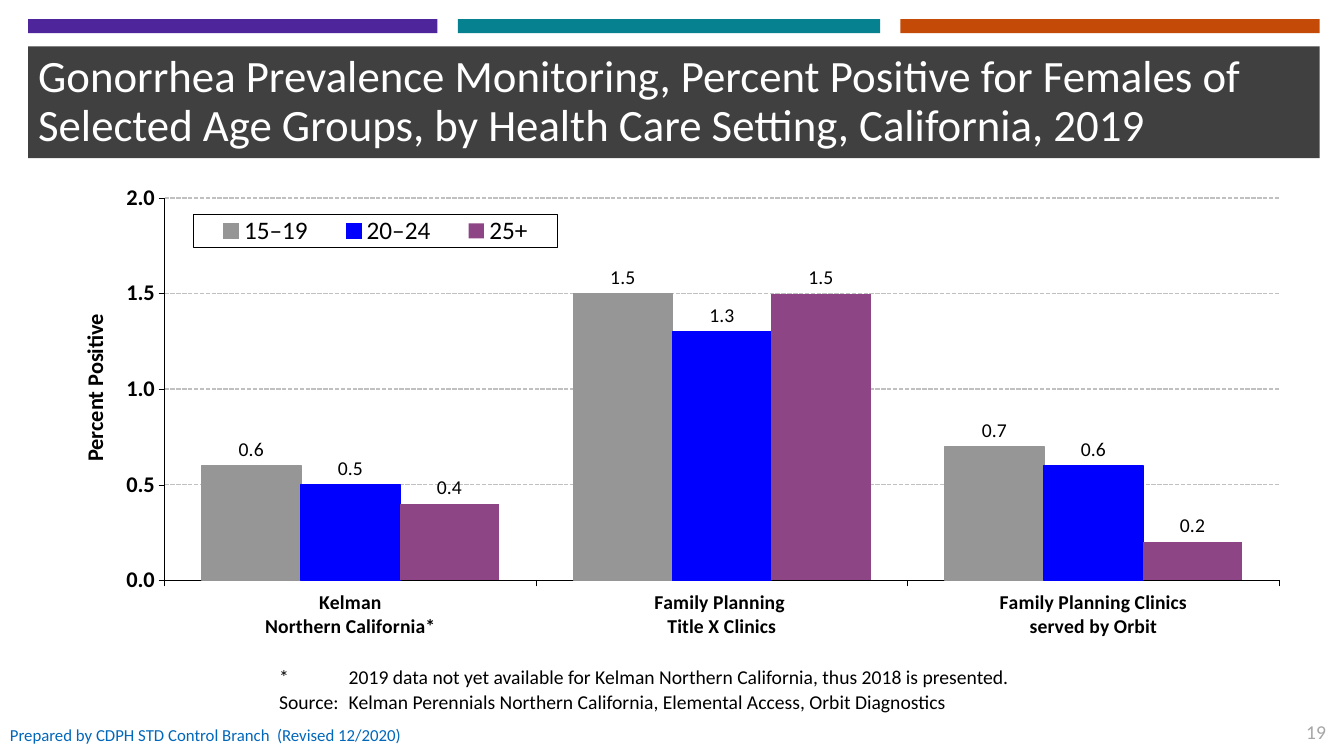
from lxml import etree
from pptx import Presentation
from pptx.chart.data import CategoryChartData
from pptx.dml.color import RGBColor
from pptx.enum.chart import (XL_CHART_TYPE, XL_LABEL_POSITION,
                             XL_LEGEND_POSITION, XL_TICK_MARK)
from pptx.enum.dml import MSO_LINE
from pptx.enum.shapes import MSO_SHAPE
from pptx.enum.text import MSO_ANCHOR, PP_ALIGN
from pptx.oxml import parse_xml
from pptx.oxml.ns import nsdecls
from pptx.util import Inches, Pt

FONT = "Calibri"
BLACK = RGBColor(0x00, 0x00, 0x00)
WHITE = RGBColor(0xFF, 0xFF, 0xFF)
DARK_GRAY = RGBColor(0x40, 0x40, 0x40)
PAGE_GRAY = RGBColor(0xA6, 0xA6, 0xA6)
GRID_GRAY = RGBColor(0xC0, 0xC0, 0xC0)
PURPLE = RGBColor(0x4F, 0x25, 0x9C)
TEAL = RGBColor(0x06, 0x81, 0x90)
ORANGE = RGBColor(0xC4, 0x4A, 0x07)
FOOTER_BLUE = RGBColor(0x01, 0x67, 0xBB)
BAR_GRAY = RGBColor(0x96, 0x96, 0x96)
BAR_BLUE = RGBColor(0x00, 0x00, 0xFF)
BAR_PLUM = RGBColor(0x8E, 0x45, 0x85)

CLINICS = ["Kelman\nNorthern California*", "Family Planning \nTitle X Clinics",
           "Family Planning Clinics\nserved by Orbit"]
AGE_GROUPS = [
    ("15–19", (0.6, 1.5, 0.7), BAR_GRAY),
    ("20–24", (0.5, 1.3, 0.6), BAR_BLUE),
    ("25+", (0.4, 1.5, 0.2), BAR_PLUM),
]


def set_font(font, size, color=BLACK, bold=False):
    font.name = FONT
    font.size = Pt(size)
    font.bold = bold
    font.color.rgb = color


def add_bar(slide, left, top, width, height, color):
    shape = slide.shapes.add_shape(MSO_SHAPE.RECTANGLE, Inches(left), Inches(top),
                                   Inches(width), Inches(height))
    shape.shadow.inherit = False
    shape.fill.solid()
    shape.fill.fore_color.rgb = color
    shape.line.fill.background()
    return shape


def write(shape, lines, size, color, anchor=MSO_ANCHOR.TOP, align=PP_ALIGN.LEFT):
    frame = shape.text_frame
    frame.word_wrap = True
    frame.vertical_anchor = anchor
    frame.text = "\n".join(lines)
    for paragraph in frame.paragraphs:
        paragraph.alignment = align
        set_font(paragraph.font, size, color)
    return frame.paragraphs


def add_text(slide, left, top, width, height, lines, size, color, **options):
    box = slide.shapes.add_textbox(Inches(left), Inches(top),
                                   Inches(width), Inches(height))
    return write(box, lines, size, color, **options)


def manual_layout(x, y, width=None, height=None, inner=False):
    """Build a chart layout from fractions of the chart area."""
    layout = parse_xml(f"<c:layout {nsdecls('c')}><c:manualLayout/></c:layout>")
    settings = [("layoutTarget", "inner" if inner else None),
                ("xMode", "edge"), ("yMode", "edge"),
                ("x", x), ("y", y), ("w", width), ("h", height)]
    for name, value in settings:
        if value is not None:
            element = etree.SubElement(layout[0], etree.QName(layout.nsmap["c"], name))
            element.set("val", str(value))
    return layout


def replace_layout(parent, layout, position):
    for old in parent.xpath("c:layout"):
        parent.remove(old)
    parent.insert(position, layout)


def style_axis(axis, size):
    axis.major_tick_mark = XL_TICK_MARK.OUTSIDE
    axis.minor_tick_mark = XL_TICK_MARK.NONE
    axis.format.line.color.rgb = BLACK
    axis.format.line.width = Pt(0.25)
    set_font(axis.tick_labels.font, size, bold=True)


def style_value_axis(axis):
    style_axis(axis, 16)
    axis.minimum_scale, axis.maximum_scale, axis.major_unit = 0, 2, 0.5
    axis.tick_labels.number_format = "#,##0.0"
    axis.tick_labels.number_format_is_linked = False
    grid = axis.major_gridlines.format.line
    grid.color.rgb = GRID_GRAY
    grid.width = Pt(1.06)
    grid.dash_style = MSO_LINE.SQUARE_DOT
    title = axis.axis_title
    title.text_frame.text = "Percent Positive"
    paragraph = title.text_frame.paragraphs[0]
    set_font(paragraph.font, 16, bold=True)
    title.text_frame._txBody.bodyPr.set("rot", "-5400000")
    title.text_frame._txBody.bodyPr.set("vert", "horz")
    replace_layout(title._element, manual_layout(0.024, 0.288), 1)


def style_series(series, color):
    series.format.fill.solid()
    series.format.fill.fore_color.rgb = color
    if color == BAR_PLUM:
        series.format.line.fill.background()
    else:
        series.format.line.color.rgb = color
        series.format.line.width = Pt(1.06)
    labels = series.data_labels
    labels.show_value = True
    labels.number_format = "0.0"
    labels.number_format_is_linked = False
    labels.position = XL_LABEL_POSITION.OUTSIDE_END
    set_font(labels.font, 14)


def add_legend(chart):
    chart.has_legend = True
    legend = chart.legend
    legend.position = XL_LEGEND_POSITION.RIGHT
    legend.include_in_layout = False
    set_font(legend.font, 18)
    element = legend._element
    replace_layout(element, manual_layout(0.118, 0.1, 0.29, 0.065), 1)
    frame = parse_xml(
        f"<c:spPr {nsdecls('c', 'a')}>"
        f'<a:solidFill><a:srgbClr val="{WHITE}"/></a:solidFill>'
        f'<a:ln w="3175"><a:solidFill><a:srgbClr val="{BLACK}"/></a:solidFill></a:ln>'
        "</c:spPr>")
    element.xpath("c:txPr")[0].addprevious(frame)


def add_prevalence_chart(slide):
    data = CategoryChartData(number_format="0.0")
    data.categories = CLINICS
    for name, values, _ in AGE_GROUPS:
        data.add_series(name, values)
    chart = slide.shapes.add_chart(XL_CHART_TYPE.COLUMN_CLUSTERED, Inches(0.45),
                                   Inches(1.62), Inches(12.45), Inches(5.06), data).chart
    chart.has_title = False
    set_font(chart.font, 14)
    plot = chart.plots[0]
    plot.gap_width = 75
    plot.overlap = 0
    plot.vary_by_categories = False
    style_axis(chart.category_axis, 14)
    style_value_axis(chart.value_axis)
    for series, (_, _, color) in zip(plot.series, AGE_GROUPS):
        style_series(series, color)
    plot_area = chart._chartSpace.xpath("c:chart/c:plotArea")[0]
    replace_layout(plot_area, manual_layout(0.095, 0.068, 0.888, 0.75, inner=True), 0)
    add_legend(chart)


def main():
    presentation = Presentation()
    presentation.slide_width = Inches(13.33)
    presentation.slide_height = Inches(7.5)
    slide = presentation.slides.add_slide(presentation.slide_layouts[6])

    # Coloured strips and title band
    for left, width, color in ((0.28, 4.06, PURPLE), (4.54, 4.19, TEAL),
                               (8.93, 4.16, ORANGE)):
        add_bar(slide, left, 0.19, width, 0.14, color)
    band = add_bar(slide, 0.28, 0.46, 12.81, 1.11, DARK_GRAY)
    title = write(band, ["Gonorrhea Prevalence Monitoring, Percent Positive for Females of "
                         "Selected Age Groups, by Health Care Setting, California, 2019"],
                  32, WHITE, anchor=MSO_ANCHOR.MIDDLE)
    title[0].line_spacing = 0.9

    add_prevalence_chart(slide)

    # Notes under the chart, with a hanging indent
    notes = add_text(slide, 2.67, 6.55, 8.5, 0.59, [
        "*\t2019 data not yet available for Kelman Northern California, thus 2018 is presented.",
        "Source:\tKelman Perennials Northern California, Elemental Access, Orbit Diagnostics",
    ], 14, BLACK)
    for paragraph in notes:
        paragraph.space_after = Pt(1)
        properties = paragraph._p.get_or_add_pPr()
        properties.set("marL", str(Inches(0.69)))
        properties.set("indent", str(-Inches(0.69)))

    # Footer
    for left, width, text in ((0, 2.8, "Prepared by CDPH STD Control Branch"),
                              (2.65, 1.5, "(Revised 12/2020)")):
        add_text(slide, left, 7.09, width, 0.4, [text], 12, FOOTER_BLUE,
                 anchor=MSO_ANCHOR.MIDDLE)
    add_text(slide, 12.72, 7.09, 0.53, 0.34, ["19"], 14, PAGE_GRAY, align=PP_ALIGN.RIGHT)

    presentation.save("out.pptx")


if __name__ == "__main__":
    main()
